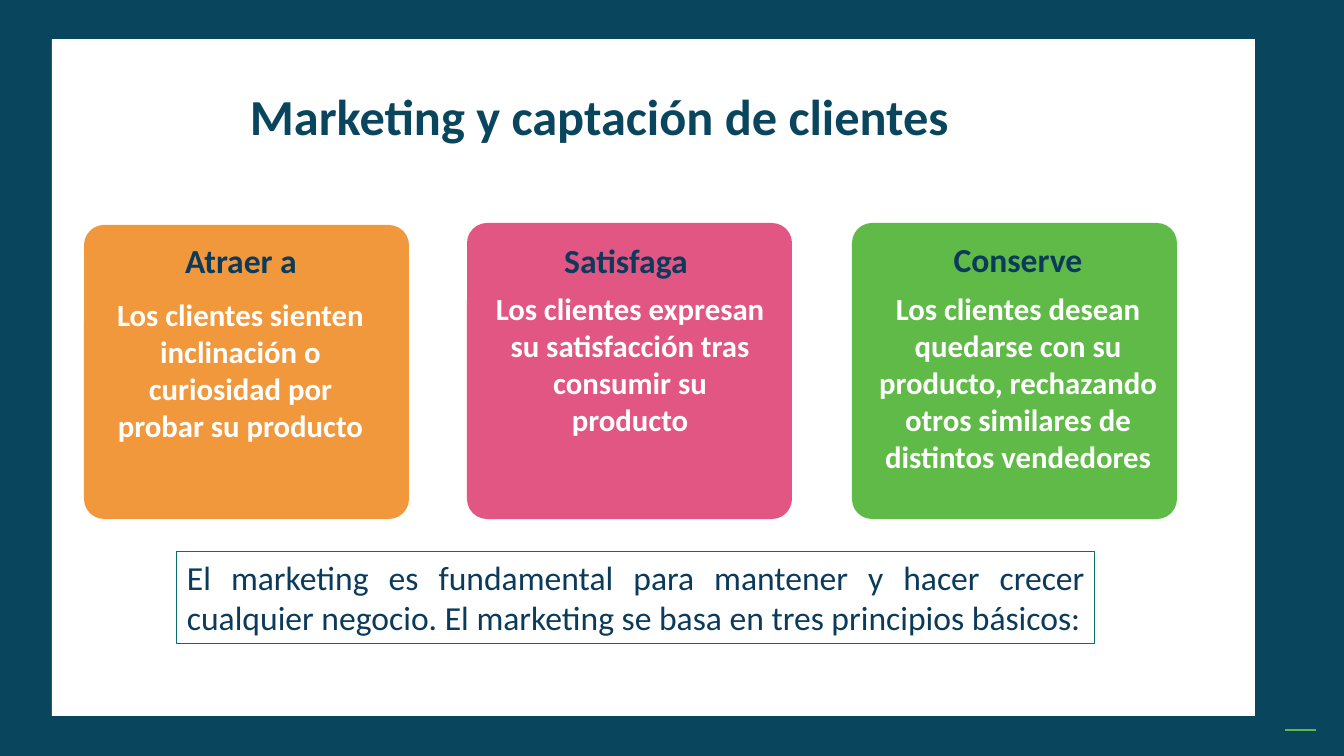
from pptx import Presentation
from pptx.dml.color import RGBColor
from pptx.enum.shapes import MSO_CONNECTOR as Connector, MSO_SHAPE as Shape
from pptx.enum.text import MSO_ANCHOR as Anchor, PP_ALIGN as Align
from pptx.oxml.ns import qn
from pptx.util import Emu, Pt
from lxml import etree

NAVY = RGBColor(0x09, 0x46, 0x5E)
INK = RGBColor(0x0B, 0x3A, 0x5B)
TEAL = RGBColor(0x08, 0x6D, 0x6E)
ORANGE = RGBColor(0xF1, 0x98, 0x3D)
PINK = RGBColor(0xE2, 0x56, 0x84)
GREEN = RGBColor(0x60, 0xBA, 0x47)
WHITE = RGBColor(0xFF, 0xFF, 0xFF)


def px(count):
    return Emu(round(count * 914400 / 100.8))


class Painter:
    font = "Calibri"
    radius = 20

    def __init__(self, page):
        self.page = page

    def shape(self, area, fill=None, border=None, kind=Shape.RECTANGLE):
        box = self.page.shapes.add_shape(kind, *map(px, area))
        box.shadow.inherit = False
        if fill is None:
            box.fill.background()
        else:
            box.fill.solid()
            box.fill.fore_color.rgb = fill
        if border is None:
            box.line.fill.background()
        else:
            box.line.color.rgb = border
            box.line.width = Pt(0.75)
        return box

    def card(self, area, fill):
        box = self.shape(area, fill, kind=Shape.ROUNDED_RECTANGLE)
        box.adjustments[0] = self.radius / min(area[2:])

    def label(self, box, words, color, size, bold=True, align=Align.CENTER, spacing=1.0):
        frame = box.text_frame
        frame.word_wrap = True
        frame.vertical_anchor = Anchor.TOP
        para = frame.paragraphs[0]
        para.alignment = align
        para.line_spacing = spacing
        span = para.add_run()
        span.text = words
        span.font.color.rgb = color
        for name, value in {"name": self.font, "size": Pt(size), "bold": bold}.items():
            setattr(span.font, name, value)

    def text(self, area, words, color, size, **style):
        box = self.page.shapes.add_textbox(*map(px, area))
        self.label(box, words, color, size, **style)

    def line(self, start, end, color):
        rule = self.page.shapes.add_connector(Connector.STRAIGHT, *map(px, start + end))
        rule.line.color.rgb = color
        rule.line.width = Pt(1)
        properties = rule._element.find(qn("p:spPr"))
        etree.SubElement(properties, qn("a:effectLst"))


# Card, heading and body areas, with their colour and wording
CARDS = [
    ((84, 225, 325, 294), ORANGE, (81, 235, 320, 50), "Atraer a", (101, 291, 279, 159),
     "Los clientes sienten inclinación o curiosidad por probar su producto"),
    ((467, 223, 325, 296), PINK, (466, 235, 320, 50), "Satisfaga", (482, 285, 296, 159),
     "Los clientes expresan su satisfacción tras consumir su producto"),
    ((852, 223, 325, 296), GREEN, (858, 234, 320, 50), "Conserve", (858, 285, 320, 197),
     "Los clientes desean quedarse con su producto, rechazando otros similares "
     "de distintos vendedores"),
]


def main():
    deck = Presentation()
    deck.slide_width, deck.slide_height = px(1344), px(756)
    painter = Painter(deck.slides.add_slide(deck.slide_layouts[6]))

    # Frame
    painter.shape((0, 0, 1344, 756), NAVY)
    painter.shape((52, 39, 1203, 677), WHITE)
    painter.line((1285, 730), (1316, 730), GREEN)

    # Title
    painter.text((240, 87, 843, 89), "Marketing y captación de clientes", NAVY, 36,
                 align=Align.LEFT, spacing=0.9)

    # Three principles
    for area, fill, heading_area, heading, body_area, body in CARDS:
        painter.card(area, fill)
        painter.text(heading_area, heading, INK, 24)
        painter.text(body_area, body, WHITE, 22)

    # Summary
    summary = painter.shape((177, 552, 918, 92), border=TEAL)
    painter.label(summary, "El marketing es fundamental para mantener y hacer crecer cualquier "
                  "negocio. El marketing se basa en tres principios básicos:", INK, 24,
                  bold=False, align=Align.JUSTIFY)

    deck.save("out.pptx")


if __name__ == "__main__":
    main()
